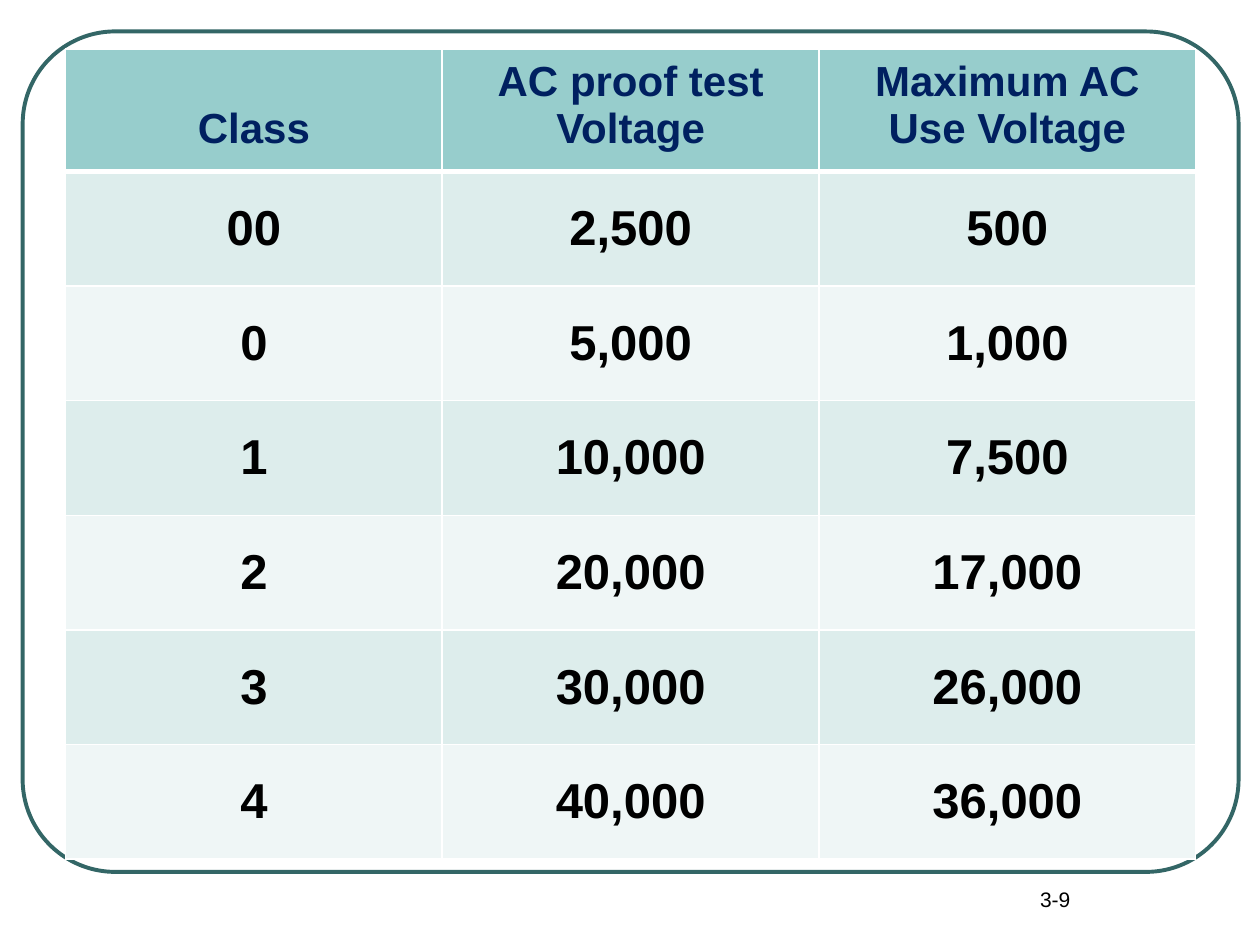
from lxml import etree
from pptx import Presentation
from pptx.dml.color import RGBColor
from pptx.enum.shapes import MSO_SHAPE
from pptx.enum.text import MSO_ANCHOR, PP_ALIGN
from pptx.oxml.ns import qn
from pptx.util import Inches, Pt

ROUND = MSO_SHAPE.ROUNDED_RECTANGLE
MIDDLE, BOTTOM = MSO_ANCHOR.MIDDLE, MSO_ANCHOR.BOTTOM
CENTER = PP_ALIGN.CENTER

TEAL = RGBColor(0x33, 0x66, 0x66)
NAVY = RGBColor(0x00, 0x20, 0x60)
BLACK = RGBColor(0x00, 0x00, 0x00)
WHITE = RGBColor(0xFF, 0xFF, 0xFF)
HEAD = RGBColor(0x97, 0xCD, 0xCC)
BANDS = [RGBColor(0xEF, 0xF6, 0xF6), RGBColor(0xDD, 0xED, 0xEC)]

ROWS = [
    ("Class", "AC proof test Voltage", "Maximum AC Use Voltage"),
    ("00", "2,500", "500"),
    ("0", "5,000", "1,000"),
    ("1", "10,000", "7,500"),
    ("2", "20,000", "17,000"),
    ("3", "30,000", "26,000"),
    ("4", "40,000", "36,000"),
]


def write(frame, text, size, color, bold=False):
    frame.text = text
    para = frame.paragraphs[0]
    para.alignment = CENTER
    font = para.runs[0].font
    font.name, font.size, font.bold = "Arial", Pt(size), bold
    font.color.rgb = color


def add_border(cell, side, width):
    """Draw one white cell edge; side is L, R, T or B, in that order."""
    props = cell._tc.get_or_add_tcPr()
    line = etree.SubElement(props, qn(f"a:ln{side}"), w=str(Pt(width)))
    fill = etree.SubElement(line, qn("a:solidFill"))
    etree.SubElement(fill, qn("a:srgbClr"), val=str(WHITE))


prs = Presentation()
prs.slide_width, prs.slide_height = Inches(10), Inches(7.5)
slide = prs.slides.add_slide(prs.slide_layouts[6])
shapes = slide.shapes

# Rounded frame
frame = shapes.add_shape(ROUND, Inches(0.18), Inches(0.25), Inches(9.65), Inches(6.67))
frame.adjustments[0] = 0.11
frame.shadow.inherit = False
frame.fill.background()
frame.line.color.rgb = TEAL
frame.line.width = Pt(2.25)

# Voltage table
table = shapes.add_table(len(ROWS), 3, Inches(0.52), Inches(0.39),
                         Inches(8.97), Inches(6.42)).table
for col in table.columns:
    col.width = Inches(2.99)
for r, texts in enumerate(ROWS):
    head = r == 0
    table.rows[r].height = Inches(0.97 if head else 0.91)
    for c, text in enumerate(texts):
        cell = table.cell(r, c)
        for side in "LRTB":
            thick = (r, side) in [(0, "B"), (1, "T")]
            add_border(cell, side, 3 if thick else 1)
        cell.fill.solid()
        cell.fill.fore_color.rgb = HEAD if head else BANDS[r % 2]
        cell.vertical_anchor = BOTTOM if head else MIDDLE
        if head:
            cell.margin_bottom = Inches(0.15)
        write(cell.text_frame, text, 24 if head else 28, NAVY if head else BLACK, True)

# Page number
page = shapes.add_textbox(Inches(7.5), Inches(6.99), Inches(1.75), Inches(0.5))
page.text_frame.word_wrap = True
write(page.text_frame, "3-9", 12, BLACK)

prs.save("out.pptx")
